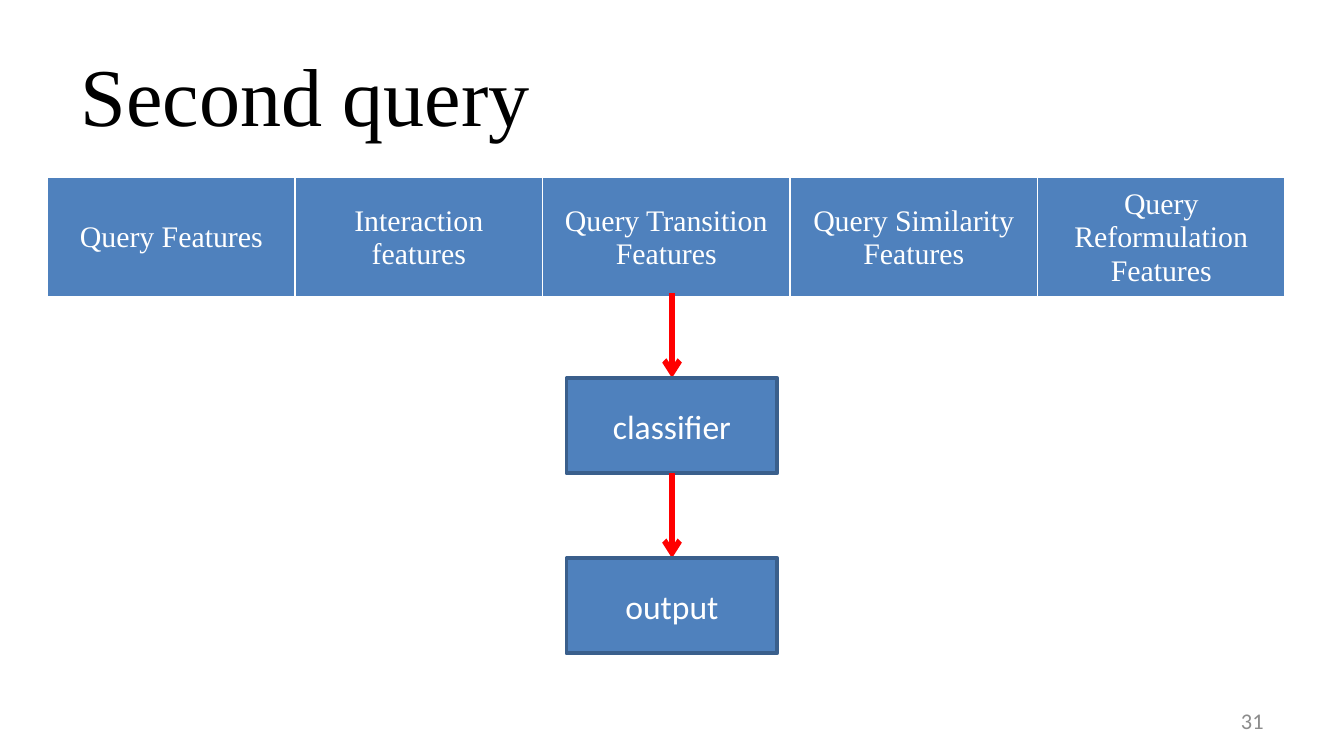
from dataclasses import dataclass

from lxml.etree import SubElement
from pptx import Presentation
from pptx.dml.color import RGBColor
from pptx.enum.shapes import MSO_CONNECTOR as Connector, MSO_SHAPE as Shape
from pptx.enum.text import MSO_ANCHOR as Anchor, PP_ALIGN as Align
from pptx.oxml.ns import qn
from pptx.util import Pt


@dataclass(frozen=True)
class Theme:
    black: RGBColor = RGBColor(0x00, 0x00, 0x00)
    white: RGBColor = RGBColor(0xFF, 0xFF, 0xFF)
    blue: RGBColor = RGBColor(0x4F, 0x81, 0xBD)
    outline: RGBColor = RGBColor(0x3A, 0x5F, 0x8C)
    red: RGBColor = RGBColor(0xFF, 0x00, 0x00)
    gray: RGBColor = RGBColor(0x8C, 0x8C, 0x8C)
    serif: str = "Times New Roman"
    sans: str = "Calibri"
    title_size: int = 44
    step_size: int = 18
    feature_size: int = 16
    number_size: int = 12


theme = Theme()


def write(frame, text, font, size, color, alignment):
    frame.word_wrap = True
    frame.vertical_anchor = Anchor.MIDDLE
    paragraph = frame.paragraphs[0]
    paragraph.alignment = alignment
    run = paragraph.add_run()
    run.text = text
    run.font.name = font
    run.font.size = Pt(size)
    run.font.color.rgb = color


def add_border(cell, side, width):
    line = SubElement(cell._tc.get_or_add_tcPr(), qn(f"a:{side}"), w=str(Pt(width)))
    fill = SubElement(line, qn("a:solidFill"))
    SubElement(fill, qn("a:srgbClr"), val=str(theme.white))


presentation = Presentation()
presentation.slide_width = Pt(720)
presentation.slide_height = Pt(405)
slide = presentation.slides.add_slide(presentation.slide_layouts[5])
shapes = slide.shapes

title = shapes.title
title.left, title.top, title.width, title.height = Pt(36), Pt(16.5), Pt(648), Pt(67.5)
write(title.text_frame, "Second query", theme.serif, theme.title_size, theme.black, Align.LEFT)

number = shapes.add_textbox(Pt(516), Pt(375), Pt(168), Pt(21.5))
write(number.text_frame, "31", theme.sans, theme.number_size, theme.gray, Align.RIGHT)

features = [
    "Query Features",
    "Interaction features",
    "Query Transition Features",
    "Query Similarity Features",
    "Query Reformulation Features",
]
table = shapes.add_table(1, len(features), Pt(25.5), Pt(95), Pt(663), Pt(60)).table
for cell, feature in zip(table.rows[0].cells, features):
    write(cell.text_frame, feature, theme.serif, theme.feature_size, theme.white, Align.CENTER)
    cell.vertical_anchor = Anchor.MIDDLE
    for side, width in (("lnL", 1), ("lnR", 1), ("lnT", 1), ("lnB", 3)):
        add_border(cell, side, width)
    cell.fill.solid()
    cell.fill.fore_color.rgb = theme.blue

center = 360
box_width, box_height = 113, 51
arrow_length = 45.5
top = 157
for step in ("classifier", "output"):
    box_top = top + arrow_length
    arrow = shapes.add_connector(Connector.STRAIGHT, Pt(center), Pt(top), Pt(center), Pt(box_top))
    arrow.line.color.rgb = theme.red
    arrow.line.width = Pt(3)
    SubElement(arrow.line._get_or_add_ln(), qn("a:tailEnd"), type="arrow")
    SubElement(arrow._element.spPr, qn("a:effectLst"))

    box = shapes.add_shape(
        Shape.RECTANGLE, Pt(center - box_width / 2), Pt(box_top), Pt(box_width), Pt(box_height)
    )
    box.shadow.inherit = False
    box.fill.solid()
    box.fill.fore_color.rgb = theme.blue
    box.line.color.rgb = theme.outline
    box.line.width = Pt(2)
    write(box.text_frame, step, theme.sans, theme.step_size, theme.white, Align.CENTER)
    top = box_top + box_height

presentation.save("out.pptx")
